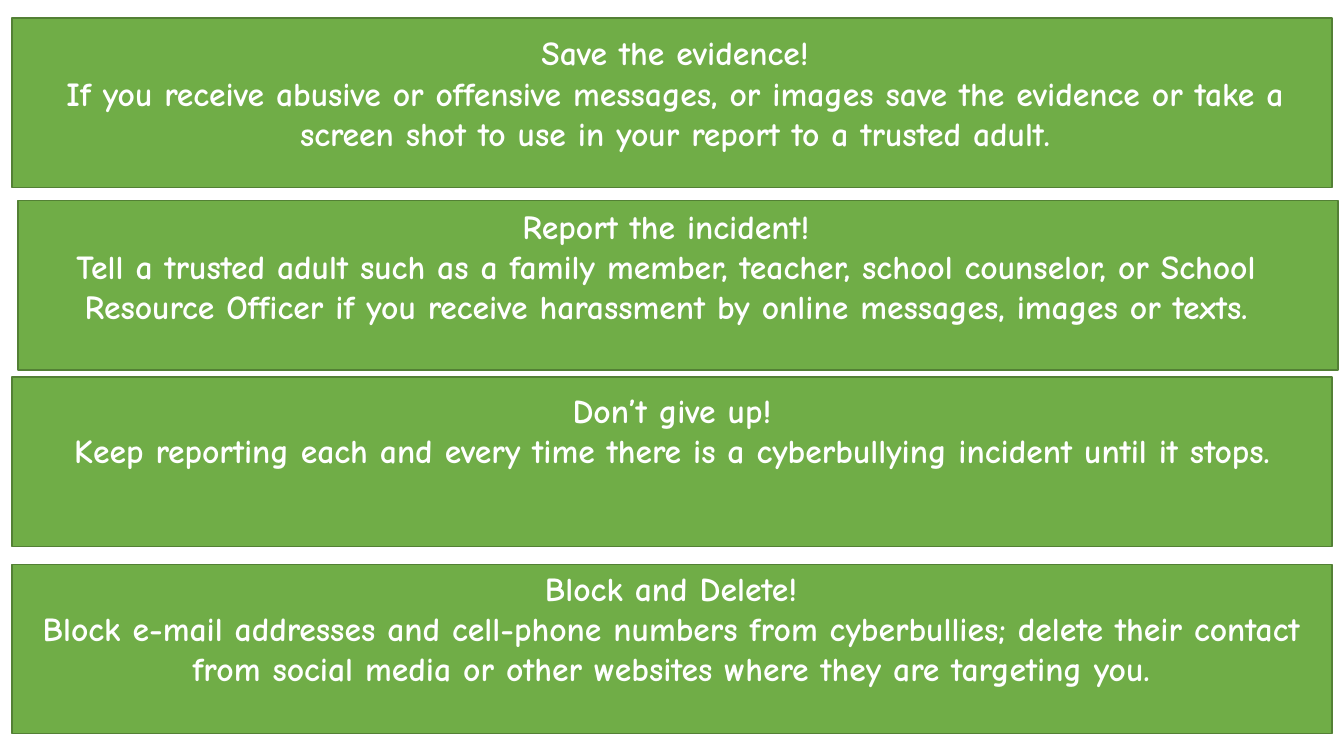
from pptx import Presentation
from pptx.dml.color import RGBColor
from pptx.enum.shapes import MSO_SHAPE
from pptx.enum.text import MSO_AUTO_SIZE, PP_ALIGN
from pptx.util import Inches, Pt


def color(hex_value):
    return RGBColor.from_string(hex_value)


prs = Presentation()
prs.slide_width = Inches(13.33)
prs.slide_height = Inches(7.5)
s = prs.slides.add_slide(prs.slide_layouts[6])

panels = [(0.12, 0.18), (0.18, 1.99), (0.12, 3.74), (0.12, 5.6)]
tips = [
    (0.24, 0.27, 12.91, 1.31, "Save the evidence!",
     "If you receive abusive or offensive messages, or images save the evidence "
     "or take a screen shot to use in your report to a trusted adult."),
    (0.12, 1.99, 12.97, 1.72, "Report the incident!",
     "Tell a trusted adult such as a family member, teacher, school counselor, or School "
     "Resource Officer if you receive harassment by online messages, images or texts."),
    (0.18, 3.82, 12.97, 1.31, "Don’t give up!",
     "Keep reporting each and every time there is a cyberbullying incident until it stops."),
    (0.2, 5.58, 12.91, 1.72, "Block and Delete!",
     "Block e-mail addresses and cell-phone numbers from cyberbullies; delete their contact "
     "from social media or other websites where they are targeting you."),
]

for left, top in panels:
    sp = s.shapes.add_shape(MSO_SHAPE.RECTANGLE, Inches(left), Inches(top),
                            Inches(13.09), Inches(1.68))
    sp.shadow.inherit = False
    sp.fill.solid()
    sp.fill.fore_color.rgb = color("70AD47")
    sp.line.color.rgb = color("538035")
    sp.line.width = Pt(1)

for left, top, width, height, title, advice in tips:
    sp = s.shapes.add_textbox(Inches(left), Inches(top), Inches(width), Inches(height))
    tf = sp.text_frame
    tf.word_wrap = True
    tf.auto_size = MSO_AUTO_SIZE.SHAPE_TO_FIT_TEXT
    for p, text in ((tf.paragraphs[0], title), (tf.add_paragraph(), advice)):
        p.alignment = PP_ALIGN.CENTER
        r = p.add_run()
        r.text = text
        r.font.name = "Comic Neue"
        r.font.size = Pt(24)
        r.font.bold = True
        r.font.color.rgb = color("FFFFFF")

prs.save("out.pptx")
